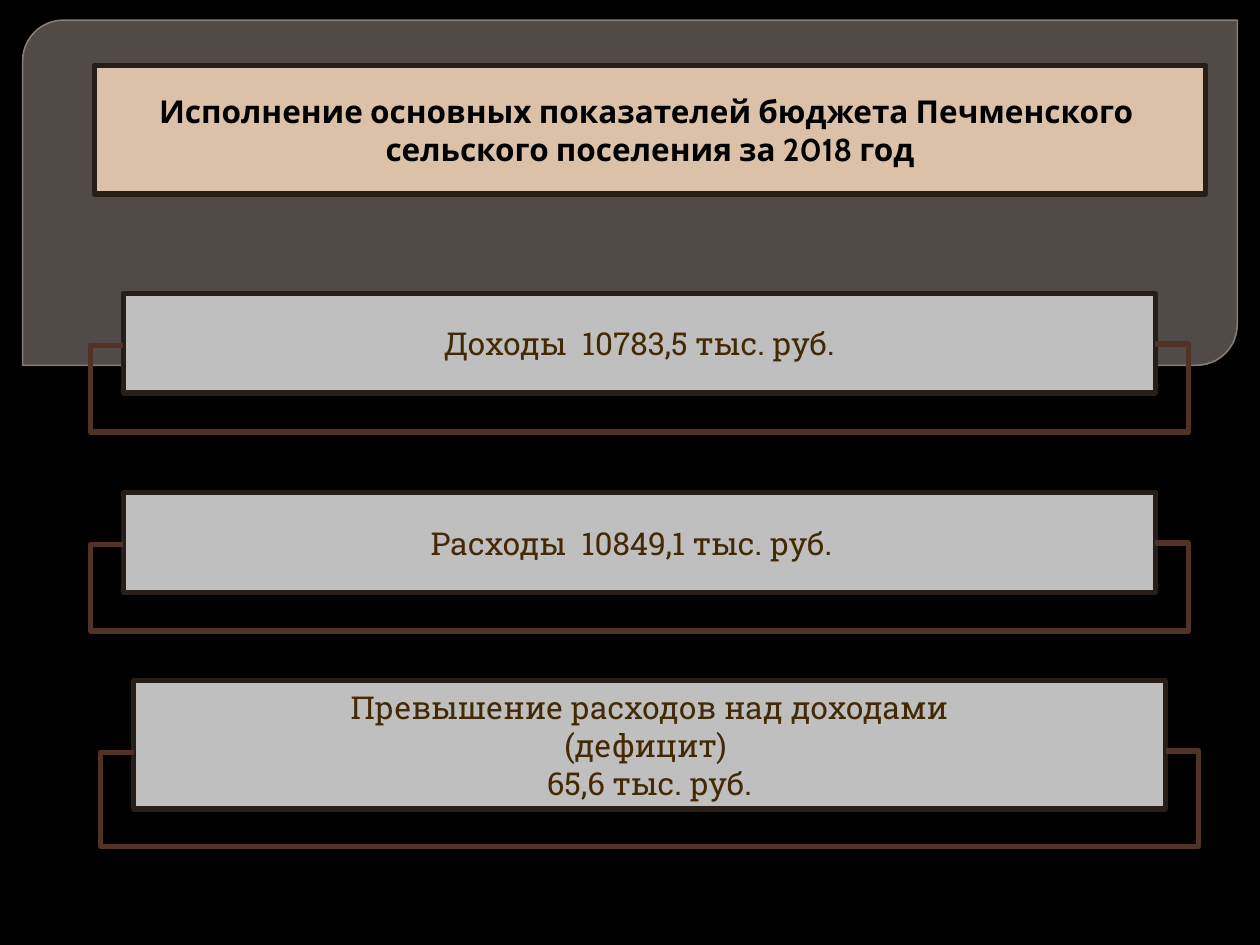
from lxml import etree
from pptx import Presentation
from pptx.dml.color import RGBColor
from pptx.enum.shapes import MSO_CONNECTOR, MSO_SHAPE
from pptx.enum.text import MSO_ANCHOR, PP_ALIGN
from pptx.oxml.ns import qn
from pptx.util import Inches, Pt

COLORS = {
    "background": "000000", "panel": "7D726E", "panel_line": "948A85",
    "title_fill": "DBC1A7", "title_text": "000000",
    "box_fill": "BFBFBF", "box_line": "271E18", "box_text": "432A05",
    "bracket": "523227",
}

TITLE = ["Исполнение основных показателей бюджета Печменского ",
         "сельского поселения за 2018 год"]

# Lines, left, top, height, bracket start (y), bracket drop
INDICATORS = [
    (["Доходы  10783,5 тыс. руб."], 0.98, 2.33, 0.79, 2.74, 0.70),
    (["Расходы  10849,1 тыс. руб.  "], 0.98, 3.91, 0.79, 4.32, 0.70),
    (["Превышение расходов над доходами", "(дефицит) ", "65,6 тыс. руб."],
     1.06, 5.40, 1.02, 5.97, 0.76),
]
BOX_WIDTH = 8.19
BRACKET_OVERHANG = 0.26
BRACKET_RISE = 0.01  # the right end sits slightly above the left one


def rgb(name):
    return RGBColor.from_string(COLORS[name])


def set_alpha(color_format_parent, percent):
    color = color_format_parent.find(".//" + qn("a:srgbClr"))
    etree.SubElement(color, qn("a:alpha")).set("val", str(percent * 1000))


def add_shape(slide, kind, left, top, width, height, fill, line, line_width):
    shape = slide.shapes.add_shape(
        kind, Inches(left), Inches(top), Inches(width), Inches(height))
    shape.shadow.inherit = False
    shape.fill.solid()
    shape.fill.fore_color.rgb = rgb(fill)
    shape.line.color.rgb = rgb(line)
    shape.line.width = Pt(line_width)
    return shape


def add_box(slide, lines, left, top, width, height, fill, text_color, font, bold=False):
    shape = add_shape(slide, MSO_SHAPE.RECTANGLE, left, top, width, height,
                      fill, "box_line", 3)
    frame = shape.text_frame
    frame.word_wrap = True
    frame.vertical_anchor = MSO_ANCHOR.MIDDLE
    for index, line in enumerate(lines):
        paragraph = frame.add_paragraph() if index else frame.paragraphs[0]
        paragraph.text = line
        paragraph.alignment = PP_ALIGN.CENTER
        paragraph.font.name = font
        paragraph.font.size = Pt(18)
        paragraph.font.bold = bold
        paragraph.font.color.rgb = rgb(text_color)


def add_bracket(slide, left, start, drop):
    connector = slide.shapes.add_connector(
        MSO_CONNECTOR.ELBOW, Inches(left), Inches(start),
        Inches(left + BOX_WIDTH), Inches(start - BRACKET_RISE))
    connector.line.color.rgb = rgb("bracket")
    connector.line.width = Pt(3)
    properties = connector._element.spPr
    etree.SubElement(properties, qn("a:effectLst"))

    # Five-segment elbow that passes outside and below the box
    geometry = properties.find(qn("a:prstGeom"))
    geometry.set("prst", "bentConnector5")
    guides = geometry.find(qn("a:avLst"))
    overhang = BRACKET_OVERHANG / BOX_WIDTH
    ratios = (-overhang, -drop / BRACKET_RISE, 1 + overhang)
    for number, ratio in enumerate(ratios, 1):
        guide = etree.SubElement(guides, qn("a:gd"))
        guide.set("name", f"adj{number}")
        guide.set("fmla", f"val {round(ratio * 100000)}")


def main():
    presentation = Presentation()
    presentation.slide_width = Inches(10)
    presentation.slide_height = Inches(7.5)
    slide = presentation.slides.add_slide(presentation.slide_layouts[6])
    slide.background.fill.solid()
    slide.background.fill.fore_color.rgb = rgb("background")

    # Translucent panel behind the title
    panel = add_shape(slide, MSO_SHAPE.ROUND_2_DIAG_RECTANGLE,
                      0.18, 0.16, 9.64, 2.74, "panel", "panel_line", 0.87)
    panel.adjustments[0] = 0.118
    panel.adjustments[1] = 0
    properties = panel._element.spPr
    set_alpha(properties.find(qn("a:solidFill")), 65)
    set_alpha(properties.find(qn("a:ln")), 88)

    # Title
    add_box(slide, TITLE, 0.75, 0.52, 8.82, 1.02,
            "title_fill", "title_text", "Cabin", bold=True)

    # Budget indicators, then their brackets on top
    for lines, left, top, height, _, _ in INDICATORS:
        add_box(slide, lines, left, top, BOX_WIDTH, height,
                "box_fill", "box_text", "Roboto Slab")
    for _, left, _, _, start, drop in INDICATORS:
        add_bracket(slide, left, start, drop)

    presentation.save("out.pptx")


if __name__ == "__main__":
    main()
